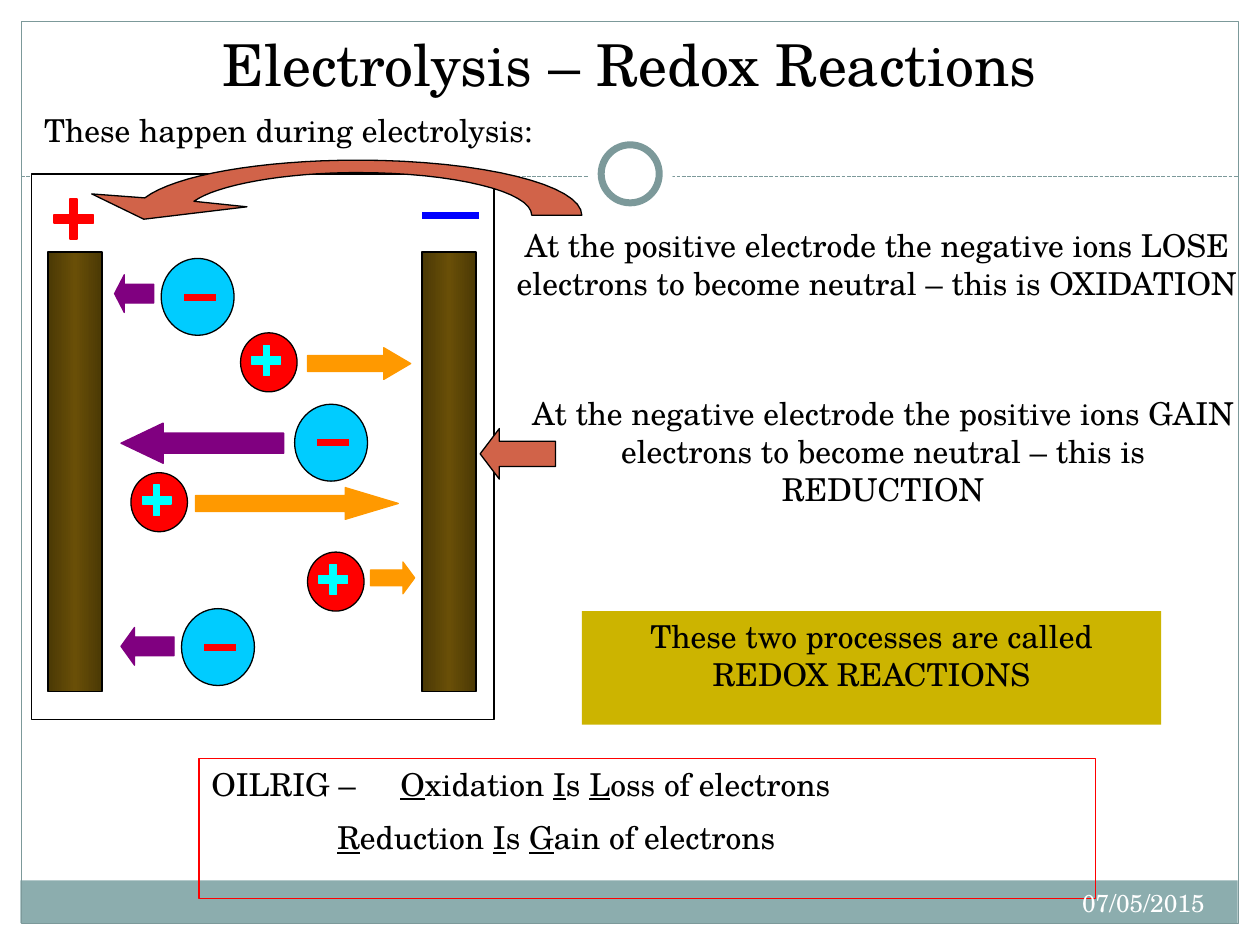
"""Build the slide on redox reactions in electrolysis."""
from copy import deepcopy

from lxml import etree
from pptx import Presentation
from pptx.dml.color import RGBColor
from pptx.enum.dml import MSO_LINE
from pptx.enum.shapes import MSO_CONNECTOR, MSO_SHAPE
from pptx.enum.text import MSO_ANCHOR, PP_ALIGN
from pptx.oxml.ns import qn
from pptx.util import Cm, Pt

RECT, OVAL, PLUS = MSO_SHAPE.RECTANGLE, MSO_SHAPE.OVAL, MSO_SHAPE.CROSS
RIGHT, LEFT = MSO_SHAPE.RIGHT_ARROW, MSO_SHAPE.LEFT_ARROW
STRAIGHT, DASH = MSO_CONNECTOR.STRAIGHT, MSO_LINE.SQUARE_DOT
TOP, BOTTOM = MSO_ANCHOR.TOP, MSO_ANCHOR.BOTTOM
START, MID, END = PP_ALIGN.LEFT, PP_ALIGN.CENTER, PP_ALIGN.RIGHT

THEME = {
    "font": "TeX Gyre Schola",
    "title": 33, "body": 18, "date": 14, "gap": 9, "thin": 0.75, "thick": 4,
    "black": "000000", "white": "FFFFFF", "bar": "8CADAE", "edge": "7C999A",
    "red": "FF0000", "blue": "0000FF", "sky": "00CCFF", "cyan": "00FFFF",
    "orange": "FF9900", "purple": "800080", "rust": "D16349",
    "gold": "CCB400", "dark": "4B3905", "brown": "694F07",
}

TEXTS = [
    ((0.84, 0, 23.7, 2.11), ["Electrolysis – Redox Reactions"], MID, "title", "black", BOTTOM),
    ((16.08, 17.78, 8.46, 1.02), ["07/05/2015"], END, "date", "white", TOP),
    ((0.64, 2.11, 24.13, 1.27), ["These happen during electrolysis:"],
     START, "body", "black", TOP),
    ((9.96, 4.44, 15.44, 1.8),
     ["At the positive electrode the negative ions LOSE electrons to become "
      "neutral – this is OXIDATION"], MID, "body", "black", TOP),
    ((10.21, 7.82, 15.19, 1.8),
     ["At the negative electrode the positive ions GAIN electrons to become "
      "neutral – this is REDUCTION"], MID, "body", "black", TOP),
]
REDOX = ["These two processes are called REDOX REACTIONS"]
OILRIG = ["OILRIG – \t_O_xidation _I_s _L_oss of electrons",
          "\t\t_R_eduction _I_s _G_ain of electrons"]

ANIONS = [(3.25, 5.21), (5.94, 8.15), (3.66, 12.27)]
CATIONS = [(4.85, 6.71), (2.64, 9.53), (6.2, 11.13)]
RODS = [0.97, 8.51]
ARROWS = [
    (RIGHT, (6.2, 7.01, 2.08, 0.64), "orange", 0.85),
    (RIGHT, (7.47, 11.33, 0.89, 0.64), "orange", 0.37),
    (RIGHT, (3.94, 9.83, 4.09, 0.64), "orange", 1.67),
    (LEFT, (2.31, 5.54, 0.79, 0.76), "purple", 0.26),
    (LEFT, (2.44, 12.65, 1.07, 0.76), "purple", 0.36),
    (LEFT, (2.44, 8.53, 3.28, 0.81), "purple", 1.05),
]
SWOOP = [
    [(3.91, 4.06)],
    [(4.37, 3.73), (5.72, 3.48), (7.21, 3.48)],
    [(9.14, 3.48), (10.72, 3.86), (10.72, 4.34)],
    [(11.73, 4.34)],
    [(11.73, 3.73), (9.73, 3.23), (7.21, 3.23)],
    [(5.26, 3.23), (3.53, 3.53), (2.92, 3.99)],
    [(1.85, 3.91)], [(2.9, 4.42)], [(4.98, 4.17)],
]
STEPS = 16

deck = Presentation()
deck.slide_width, deck.slide_height = Cm(25.4), Cm(19.05)
shapes = deck.slides.add_slide(deck.slide_layouts[6]).shapes


def apply(item, look):
    for name, value in look.items():
        setattr(item, name, value)


def tint(name):
    return RGBColor.from_string(THEME[name])


def stroke(line, color, width="thin"):
    line.color.rgb = tint(color)
    line.width = Pt(THEME[width])


def paint(shape, fill=None, edge=None, width="thin"):
    shape.shadow.inherit = False
    if fill:
        shape.fill.solid()
        shape.fill.fore_color.rgb = tint(fill)
    else:
        shape.fill.background()
    if edge:
        stroke(shape.line, edge, width)
    else:
        shape.line.fill.background()


def draw(kind, box, fill=None, edge=None, width="thin", adjust=()):
    shape = shapes.add_shape(kind, *map(Cm, box))
    paint(shape, fill, edge, width)
    for spot, value in enumerate(adjust):
        shape.adjustments[spot] = value
    return shape


def rule(left, top, length, color, width="thick"):
    line = shapes.add_connector(STRAIGHT, Cm(left), Cm(top), Cm(left + length), Cm(top))
    stroke(line.line, color, width)
    etree.SubElement(line._element.spPr, qn("a:effectLst"))
    return line


def write(shape, paras, align, size="body", color="black", anchor=TOP):
    frame = shape.text_frame
    apply(frame, {"word_wrap": True, "vertical_anchor": anchor})
    for spot, text in enumerate(paras):
        para = frame.add_paragraph() if spot else frame.paragraphs[0]
        apply(para, {"alignment": align, "space_before": Pt(THEME["gap"] if spot else 0)})
        for part, words in enumerate(text.split("_")):
            run = para.add_run()
            run.text = words
            apply(run.font, {"name": THEME["font"], "size": Pt(THEME[size]),
                             "underline": part % 2 == 1})
            run.font.color.rgb = tint(color)


def shade(shape, colors):
    shape.fill.gradient()
    shape.fill.gradient_angle = 0
    stops = shape._element.spPr.find(".//" + qn("a:gsLst"))
    stops.append(deepcopy(stops[0]))
    for spot, (stop, color) in enumerate(zip(shape.fill.gradient_stops, colors)):
        stop.color.rgb = tint(color)
        stop.position = spot / 2


def trace(parts):
    points = []
    for part in parts:
        if len(part) == 1:
            points += part
            continue
        curve = [points[-1], *part]
        for step in range(1, STEPS + 1):
            t = step / STEPS
            mix = ((1 - t) ** 3, 3 * t * (1 - t) ** 2, 3 * t * t * (1 - t), t ** 3)
            points.append(tuple(sum(m * p[axis] for m, p in zip(mix, curve))
                                for axis in (0, 1)))
    return [(Cm(x), Cm(y)) for x, y in points]


def main():
    draw(RECT, (0.41, 17.75, 24.54, 0.86), "bar")
    draw(RECT, (0.43, 0.43, 24.54, 18.19), None, "edge")
    rule(0.43, 3.56, 24.54, "edge", "thin").line.dash_style = DASH
    draw(OVAL, (11.86, 2.67, 1.7, 1.7), "white")
    draw(OVAL, (12.12, 2.92, 1.17, 1.17), "white", "edge", "thick")

    draw(RECT, (0.64, 3.51, 9.32, 11), "white", "black")
    for x, y in ANIONS:
        draw(OVAL, (x, y, 1.47, 1.55), "sky", "black")
        rule(x + 0.46, y + 0.78, 0.64, "red")
    for x, y in CATIONS:
        draw(OVAL, (x, y, 1.14, 1.19), "red", "black")
        draw(PLUS, (x + 0.23, y + 0.25, 0.58, 0.61), "cyan", "cyan", adjust=[0.39])
    for x in RODS:
        shade(draw(RECT, (x, 5.08, 1.09, 8.86), None, "black"), ["dark", "brown", "dark"])
    rule(8.51, 4.34, 1.14, "blue")
    draw(PLUS, (1.09, 4.01, 0.79, 0.81), "red", "red", adjust=[0.41])
    for kind, box, color, head in ARROWS:
        draw(kind, box, color, color, adjust=[0.5, head])

    write(draw(RECT, (11.73, 12.32, 11.68, 2.29), "gold"), REDOX, MID)
    write(draw(RECT, (4.01, 15.29, 18.08, 2.82), None, "red"), OILRIG, START)
    for box, *rest in TEXTS:
        write(shapes.add_textbox(*map(Cm, box)), *rest)

    first, *others = trace(SWOOP)
    pen = shapes.build_freeform(*first)
    pen.add_line_segments(others, close=True)
    paint(pen.convert_to_shape(), "rust", "black")
    draw(LEFT, (9.68, 8.64, 1.52, 1.02), "rust", "black", adjust=[0.5, 0.38])
    deck.save("out.pptx")


if __name__ == "__main__":
    main()
